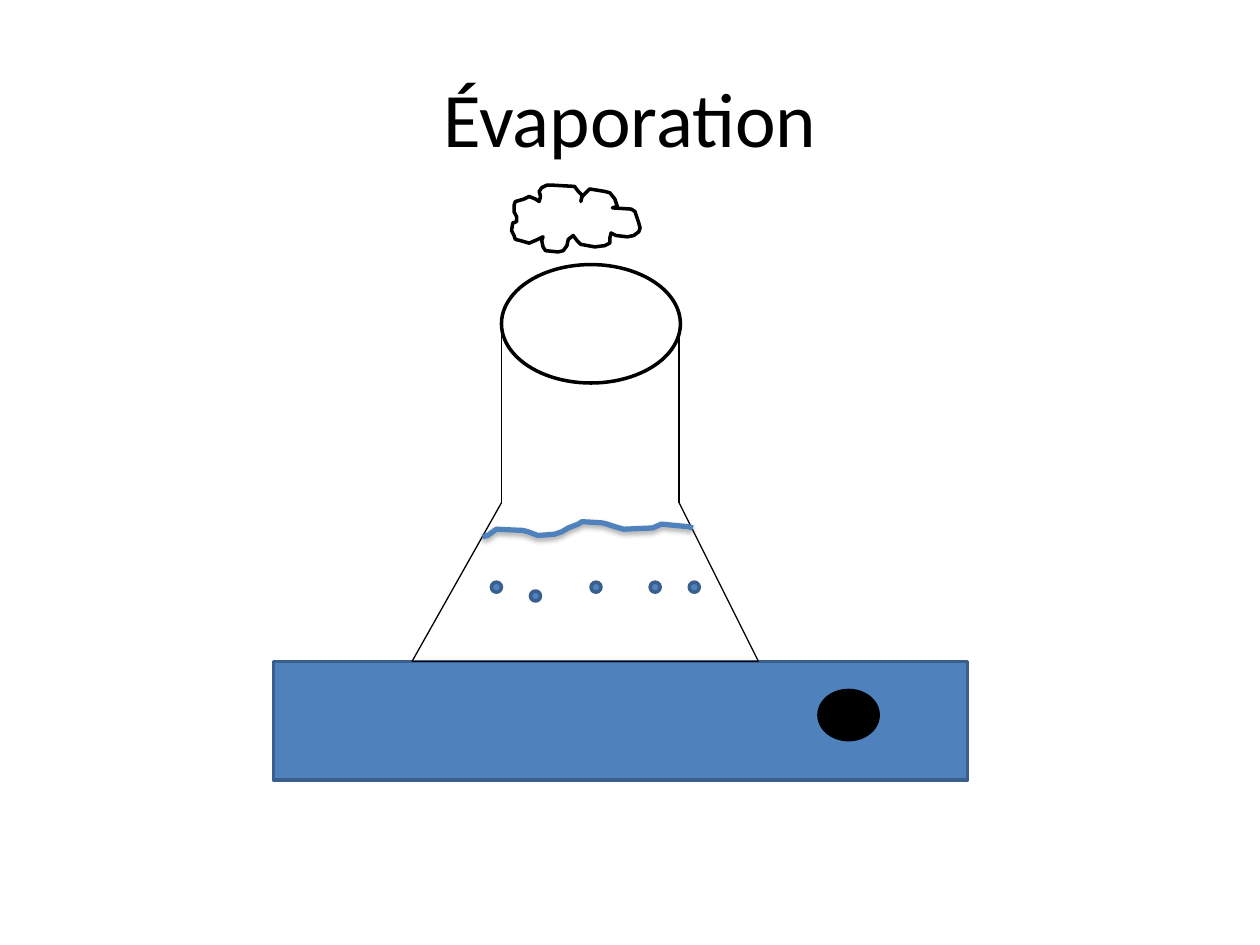
from lxml.etree import SubElement
from pptx import Presentation
from pptx.dml.color import RGBColor
from pptx.enum.shapes import MSO_CONNECTOR, MSO_SHAPE
from pptx.enum.text import MSO_ANCHOR, PP_ALIGN
from pptx.oxml.ns import qn
from pptx.util import Inches, Pt

BLACK = RGBColor(0x00, 0x00, 0x00)
BLUE = RGBColor(0x4F, 0x81, 0xBD)
DARK_BLUE = RGBColor(0x3A, 0x5F, 0x8C)

NECK_LEFT, NECK_RIGHT = 3.98, 5.39
NECK_TOP, NECK_BOTTOM = 2.65, 3.99
BASE_LEFT, BASE_RIGHT, BASE_Y = 3.27, 6.02, 5.25
FLASK_EDGES = [
    ((NECK_LEFT, NECK_TOP), (NECK_LEFT, NECK_BOTTOM)),
    ((NECK_RIGHT, NECK_TOP), (NECK_RIGHT, NECK_BOTTOM)),
    ((NECK_LEFT, NECK_BOTTOM), (BASE_LEFT, BASE_Y)),
    ((NECK_RIGHT, NECK_BOTTOM), (BASE_RIGHT, BASE_Y)),
    ((BASE_LEFT, BASE_Y), (BASE_RIGHT, BASE_Y)),
]
BUBBLES = [(3.9, 4.62), (4.21, 4.69), (4.69, 4.62), (5.16, 4.62), (5.47, 4.62)]
BUBBLE_SIZE = 0.08
WATER_SURFACE = [
    (3.83, 4.26), (3.87, 4.25), (3.94, 4.2), (4.15, 4.21), (4.19, 4.22),
    (4.27, 4.25), (4.4, 4.24), (4.46, 4.22), (4.51, 4.19), (4.59, 4.16),
    (4.62, 4.14), (4.78, 4.15), (4.82, 4.16), (4.88, 4.18), (4.95, 4.2),
    (5.18, 4.19), (5.25, 4.16), (5.46, 4.18), (5.5, 4.19),
]
STEAM_CLOUD = [
    (4.31, 1.88), (4.27, 1.9), (4.2, 1.93), (4.13, 1.91), (4.09, 1.9),
    (4.08, 1.87), (4.06, 1.83), (4.07, 1.77), (4.1, 1.76), (4.1, 1.72),
    (4.08, 1.68), (4.08, 1.63), (4.09, 1.6), (4.16, 1.58), (4.2, 1.56),
    (4.25, 1.58), (4.28, 1.6), (4.29, 1.56), (4.28, 1.52), (4.3, 1.49),
    (4.34, 1.47), (4.39, 1.47), (4.56, 1.48), (4.59, 1.52), (4.62, 1.55),
    (4.61, 1.6), (4.62, 1.56), (4.65, 1.53), (4.68, 1.5), (4.8, 1.52),
    (4.84, 1.53), (4.88, 1.58), (4.9, 1.64), (4.86, 1.65), (5.01, 1.66),
    (5.04, 1.68), (5.07, 1.77), (5.08, 1.81), (5.07, 1.84), (5.03, 1.87),
    (4.98, 1.88), (4.89, 1.87), (4.85, 1.85), (4.84, 1.89), (4.84, 1.93),
    (4.8, 1.95), (4.72, 1.96), (4.61, 1.94), (4.58, 1.91), (4.55, 1.87),
    (4.51, 1.9), (4.5, 1.95), (4.47, 1.99), (4.43, 2.0), (4.33, 1.99),
    (4.31, 1.96), (4.3, 1.91),
]


def paint(shape, fill, line, width):
    """Set the fill, outline and absence of shadow of a shape."""
    shape.shadow.inherit = False
    if fill is None:
        shape.fill.background()
    else:
        shape.fill.solid()
        shape.fill.fore_color.rgb = fill
    shape.line.color.rgb = line
    shape.line.width = Pt(width)


def add_title(slide, text):
    """Add the centred title."""
    frame = slide.shapes.add_textbox(
        Inches(0.5), Inches(0.3), Inches(9), Inches(1.25)).text_frame
    frame.word_wrap = True
    frame.vertical_anchor = MSO_ANCHOR.MIDDLE
    paragraph = frame.paragraphs[0]
    paragraph.text = text
    paragraph.alignment = PP_ALIGN.CENTER
    paragraph.font.color.rgb = BLACK
    for name, value in {"name": "Calibri", "size": Pt(44)}.items():
        setattr(paragraph.font, name, value)


def add_preset(slide, kind, box, fill, line):
    """Add a preset shape in a box of left, top, width and height."""
    shape = slide.shapes.add_shape(kind, *map(Inches, box))
    paint(shape, fill, line, 2)


def add_edge(slide, start, end):
    """Add one thin straight edge of the flask."""
    connector = slide.shapes.add_connector(
        MSO_CONNECTOR.STRAIGHT, *map(Inches, start + end))
    connector.line.color.rgb = BLACK
    connector.line.width = Pt(0.75)
    SubElement(connector._element.spPr, qn("a:effectLst"))


def add_outline(slide, points, line, width, close):
    """Add an unfilled freeform with round joins."""
    first, *rest = [tuple(map(Inches, point)) for point in points]
    builder = slide.shapes.build_freeform(*first)
    builder.add_line_segments(rest, close=close)
    shape = builder.convert_to_shape()
    paint(shape, None, line, width)
    SubElement(shape.line._get_or_add_ln(), qn("a:round"))
    return shape


def add_soft_shadow(shape):
    """Give a shape a faint shadow straight below it."""
    effects = shape._element.spPr.find(qn("a:effectLst"))
    shadow = SubElement(effects, qn("a:outerShdw"), {
        "blurRad": str(Pt(3.1)), "dist": str(Pt(1.8)),
        "dir": "5400000", "rotWithShape": "0"})
    color = SubElement(shadow, qn("a:srgbClr"), val=str(BLACK))
    SubElement(color, qn("a:alpha"), val="35000")


def main():
    """Build the evaporation slide."""
    presentation = Presentation()
    presentation.slide_width = Inches(10)
    presentation.slide_height = Inches(7.5)
    slide = presentation.slides.add_slide(presentation.slide_layouts[6])

    add_title(slide, "Évaporation")
    add_preset(slide, MSO_SHAPE.RECTANGLE, (2.17, BASE_Y, 5.51, 0.94), BLUE, DARK_BLUE)
    add_preset(slide, MSO_SHAPE.OVAL, (6.5, 5.48, 0.47, 0.39), BLACK, BLACK)
    for start, end in FLASK_EDGES:
        add_edge(slide, start, end)
    add_soft_shadow(add_outline(slide, WATER_SURFACE, BLUE, 3, False))
    for left, top in BUBBLES:
        add_preset(slide, MSO_SHAPE.OVAL, (left, top, BUBBLE_SIZE, BUBBLE_SIZE),
                   BLUE, DARK_BLUE)
    add_preset(slide, MSO_SHAPE.OVAL, (NECK_LEFT, 2.1, 1.42, 0.94), None, BLACK)
    add_outline(slide, STEAM_CLOUD, BLACK, 2, True)
    presentation.save("out.pptx")


if __name__ == "__main__":
    main()
